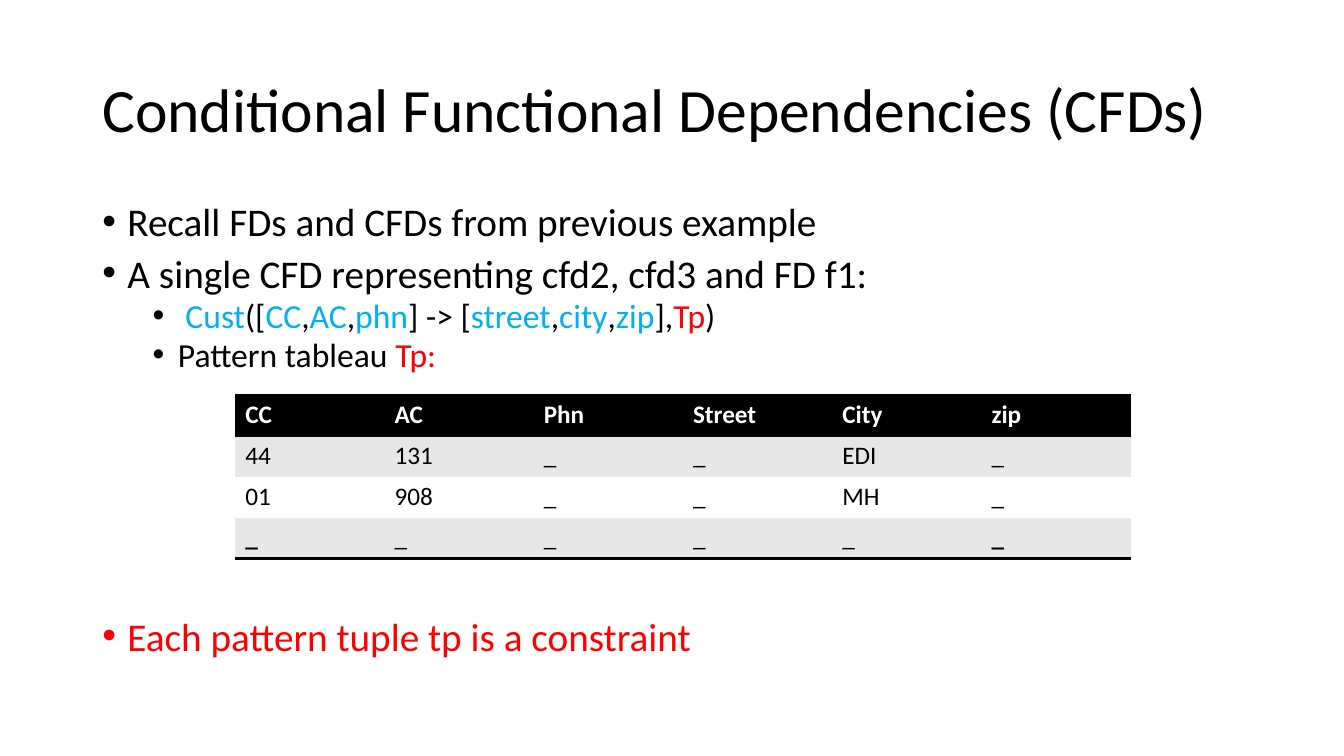
from lxml import etree
from pptx import Presentation
from pptx.dml.color import RGBColor
from pptx.enum.text import MSO_ANCHOR
from pptx.oxml.ns import qn
from pptx.util import Pt

PX = 9525
MIDDLE = MSO_ANCHOR.MIDDLE
TOP = MSO_ANCHOR.TOP
BLACK, WHITE, GREY, BLUE, RED = "000000", "FFFFFF", "E7E7E7", "00B0F0", "FF0000"
PLAIN_TABLE = "{2D5ABB26-0587-4C30-8999-92F81FD0307C}"


def color(value):
    return RGBColor.from_string(value)


def add_span(para, text, size, tint, bold=False):
    span = para.add_run()
    span.text = text
    formats = {"name": "Calibri", "size": Pt(size), "bold": bold}
    for name, value in formats.items():
        setattr(span.font, name, value)
    span.font.color.rgb = color(tint)


deck = Presentation()
deck.slide_width, deck.slide_height = 1280 * PX, 720 * PX
page = deck.slides.add_slide(deck.slide_layouts[6])

formula = [(" ", BLACK), ("Cust", BLUE), ("([", BLACK), ("CC", BLUE), (",", BLACK),
           ("AC", BLUE), (",", BLACK), ("phn", BLUE), ("] -> [", BLACK),
           ("street", BLUE), (",", BLACK), ("city", BLUE), (",", BLACK),
           ("zip", BLUE), ("],", BLACK), ("Tp", RED), (")", BLACK)]
title = [(None, [("Conditional Functional Dependencies (CFDs)", BLACK)])]
points = [
    (0, [("Recall FDs and CFDs from previous example", BLACK)]),
    (0, [("A single CFD representing cfd2, cfd3 and FD f1:", BLACK)]),
    (1, formula),
    (1, [("Pattern tableau ", BLACK), ("Tp:", RED)]),
]
conclusion = [(0, [("Each pattern tuple tp is a constraint", RED)])]

styles = {
    None: {"size": 44, "line": 0.9, "before": 0},
    0: {"size": 28, "line": 0.8, "before": 10, "margin": 24},
    1: {"size": 24, "line": 0.8, "before": 5, "margin": 72},
}
boxes = [(38, 139, MIDDLE, title), (192, 184, TOP, points), (587, 62, TOP, conclusion)]

for top, height, anchor, lines in boxes:
    box = page.shapes.add_textbox(88 * PX, top * PX, 1104 * PX, height * PX)
    frame = box.text_frame
    frame.word_wrap = True
    frame.vertical_anchor = anchor
    for index, (level, spans) in enumerate(lines):
        para = frame.add_paragraph() if index else frame.paragraphs[0]
        style = styles[level]
        para.line_spacing = style["line"]
        para.space_before = Pt(style["before"])
        if level is not None:
            para.level = level
            settings = para._p.get_or_add_pPr()
            settings.set("marL", str(style["margin"] * PX))
            settings.set("indent", str(-24 * PX))
            etree.SubElement(settings, qn("a:buFont"), typeface="Arial")
            etree.SubElement(settings, qn("a:buChar"), char="•")
        for text, tint in spans:
            add_span(para, text, style["size"], tint)

rows = [
    ["CC", "AC", "Phn", "Street", "City", "zip"],
    ["44", "131", "_", "_", "EDI", "_"],
    ["01", "908", "_", "_", "MH", "_"],
    ["_", "_", "_", "_", "_", "_"],
]
fills = [BLACK, GREY, WHITE, GREY]
borders = {0: ["a:lnT", "a:lnB"], 3: ["a:lnB"]}
bold_cells = {(0, column) for column in range(6)} | {(3, 0), (3, 5)}

tableau = page.shapes.add_table(4, 6, 224 * PX, 376 * PX, 853 * PX, 156 * PX)
for style_id in tableau.element.iter(qn("a:tableStyleId")):
    style_id.text = PLAIN_TABLE
table = tableau.table
for column in table.columns:
    column.width = round(853 / 6 * PX)
for row_index, values in enumerate(rows):
    table.rows[row_index].height = 39 * PX
    for column_index, value in enumerate(values):
        cell = table.cell(row_index, column_index)
        cell.fill.solid()
        cell.fill.fore_color.rgb = color(fills[row_index])
        add_span(cell.text_frame.paragraphs[0], value, 18,
                 BLACK if row_index else WHITE, (row_index, column_index) in bold_cells)
        properties = cell._tc.get_or_add_tcPr()
        for position, side in enumerate(borders.get(row_index, [])):
            edge = etree.Element(qn(side), w=str(Pt(2)))
            paint = etree.SubElement(edge, qn("a:solidFill"))
            etree.SubElement(paint, qn("a:srgbClr"), val=BLACK)
            properties.insert(position, edge)

deck.save("out.pptx")
